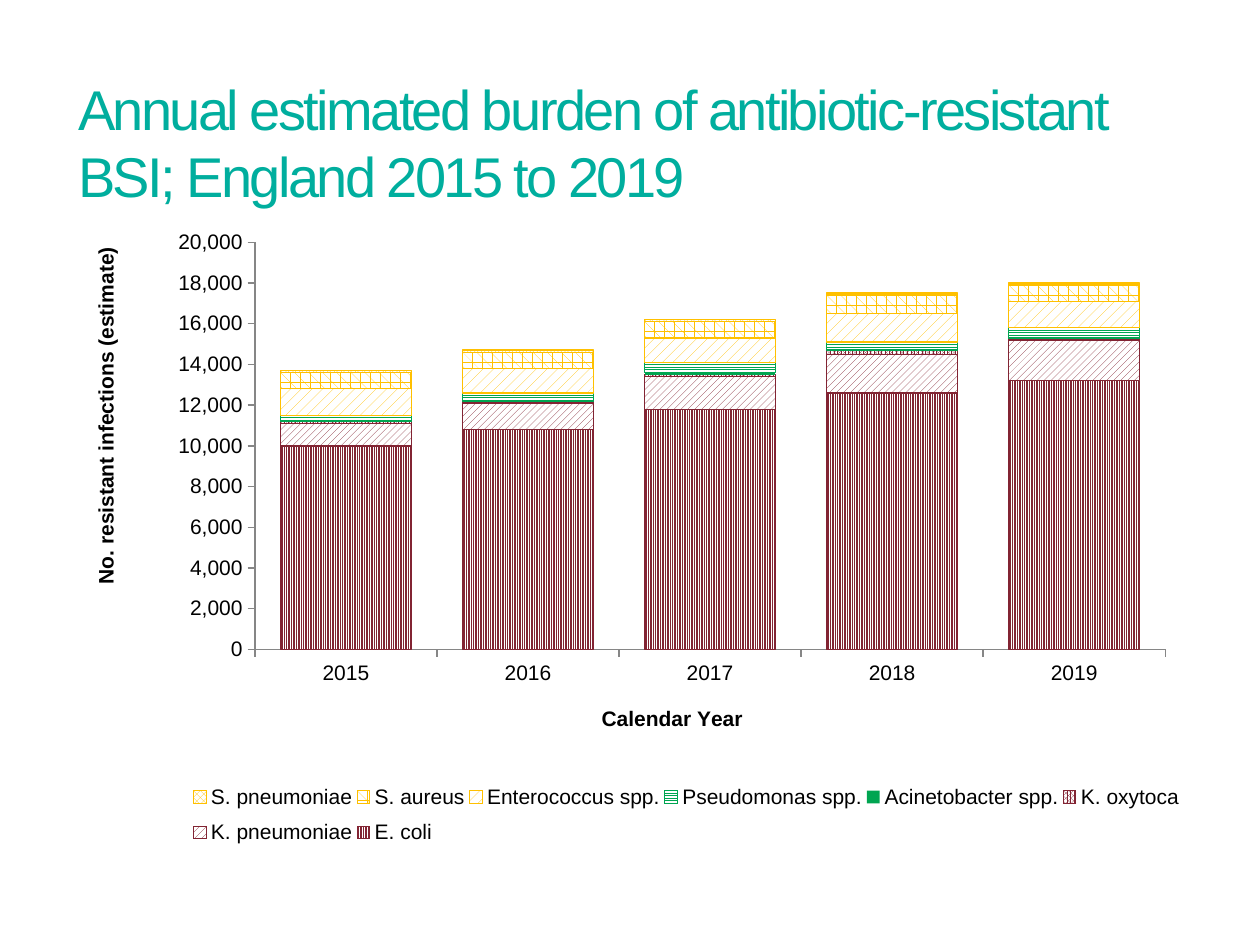
from dataclasses import dataclass
from typing import Optional

from lxml.etree import SubElement
from pptx import Presentation
from pptx.chart.axis import _BaseAxis
from pptx.chart.data import CategoryChartData
from pptx.dml.color import RGBColor
from pptx.enum.chart import XL_CHART_TYPE, XL_LEGEND_POSITION, XL_TICK_MARK
from pptx.enum.dml import MSO_PATTERN
from pptx.enum.text import MSO_ANCHOR, MSO_AUTO_SIZE, PP_ALIGN
from pptx.oxml.ns import qn
from pptx.util import Pt

FONT = "Arial"
COLORS = {
    "title": "00AE9E", "text": "000000", "axis": "868686", "white": "FFFFFF",
    "maroon": "822433", "green": "00A551", "amber": "FFC000",
}
YEARS = ["2015", "2016", "2017", "2018", "2019"]


@dataclass
class Pathogen:
    name: str
    infections: list[int]
    color: str
    pattern: Optional[MSO_PATTERN] = None
    fore: str = ""
    back: str = "white"


# Series from the bottom of the stack to the top
PATHOGENS = [
    Pathogen("E. coli", [10000, 10800, 11800, 12600, 13200], "maroon",
             MSO_PATTERN.NARROW_VERTICAL, "white", "maroon"),
    Pathogen("K. pneumoniae", [1100, 1300, 1600, 1900, 2000], "maroon",
             MSO_PATTERN.WIDE_UPWARD_DIAGONAL, "maroon"),
    Pathogen("K. oxytoca", [100, 100, 100, 200, 100], "maroon",
             MSO_PATTERN.PERCENT_80, "maroon"),
    Pathogen("Acinetobacter spp.", [0, 0, 100, 0, 0], "green"),
    Pathogen("Pseudomonas spp.", [300, 400, 500, 400, 500], "green",
             MSO_PATTERN.LIGHT_HORIZONTAL, "green"),
    Pathogen("Enterococcus spp.", [1300, 1200, 1200, 1400, 1300], "amber",
             MSO_PATTERN.DASHED_UPWARD_DIAGONAL, "amber"),
    Pathogen("S. aureus", [800, 800, 800, 900, 800], "amber",
             MSO_PATTERN.PLAID, "amber"),
    Pathogen("S. pneumoniae", [100] * 5, "amber",
             MSO_PATTERN.OUTLINED_DIAMOND, "amber"),
]


def rgb(key: str) -> RGBColor:
    return RGBColor.from_string(COLORS[key])


def place(element, index: int, inner: bool = False, **fractions: float) -> None:
    """Give a chart part a manual layout in fractions of the chart area."""
    old_layout = element.find(qn("c:layout"))
    if old_layout is not None:
        element.remove(old_layout)
    layout = SubElement(element, qn("c:layout"))
    element.insert(index, layout)
    manual = SubElement(layout, qn("c:manualLayout"))
    if inner:
        SubElement(manual, qn("c:layoutTarget")).set("val", "inner")
    for mode in ("xMode", "yMode"):
        SubElement(manual, qn(f"c:{mode}")).set("val", "edge")
    for side, fraction in fractions.items():
        SubElement(manual, qn(f"c:{side}")).set("val", str(fraction))


def style_axis(axis: _BaseAxis, title: str, x: float, y: float) -> None:
    axis.has_major_gridlines = False
    axis.major_tick_mark = XL_TICK_MARK.OUTSIDE
    axis.minor_tick_mark = XL_TICK_MARK.NONE
    axis.format.line.color.rgb = rgb("axis")
    axis.format.line.width = Pt(0.75)
    run = axis.axis_title.text_frame.paragraphs[0].add_run()
    run.text = title
    run.font.name, run.font.size, run.font.bold = FONT, Pt(12), True
    run.font.color.rgb = rgb("text")
    place(axis.axis_title._element, 1, x=x, y=y)


def style_series(series, pathogen: Pathogen) -> None:
    fill = series.format.fill
    if pathogen.pattern is None:
        fill.solid()
        fill.fore_color.rgb = rgb(pathogen.color)
        return
    fill.patterned()
    fill.pattern = pathogen.pattern
    fill.fore_color.rgb = rgb(pathogen.fore)
    fill.back_color.rgb = rgb(pathogen.back)
    series.format.line.color.rgb = rgb(pathogen.color)
    series.format.line.width = Pt(0.75)


def add_title(slide, text: str) -> None:
    title = slide.shapes.title
    title.left, title.top, title.width, title.height = Pt(44.6), Pt(43.2), Pt(632), Pt(51)
    frame = title.text_frame
    frame.margin_left = frame.margin_top = frame.margin_right = frame.margin_bottom = 0
    frame.word_wrap = True
    frame.auto_size = MSO_AUTO_SIZE.NONE
    frame.vertical_anchor = MSO_ANCHOR.TOP
    paragraph = frame.paragraphs[0]
    paragraph.alignment = PP_ALIGN.LEFT
    paragraph.line_spacing = Pt(38)
    run = paragraph.add_run()
    run.text = text
    run.font.name, run.font.size = FONT, Pt(32)
    run.font.color.rgb = rgb("title")
    run.font._element.set("spc", "-150")


def add_burden_chart(slide) -> None:
    burden = CategoryChartData(number_format="#,##0")
    burden.categories = YEARS
    for pathogen in PATHOGENS:
        burden.add_series(pathogen.name, pathogen.infections)
    chart = slide.shapes.add_chart(
        XL_CHART_TYPE.COLUMN_STACKED, Pt(44.6), Pt(129.6), Pt(632), Pt(367.2), burden
    ).chart
    chart.has_title = False
    chart.font.name, chart.font.size = FONT, Pt(12)
    chart.font.color.rgb = rgb("text")

    # Stacked columns
    columns = chart.plots[0]
    columns.gap_width, columns.overlap = 39, 100
    columns.vary_by_categories = False
    for series, pathogen in zip(columns.series, PATHOGENS):
        style_series(series, pathogen)
    place(chart._chartSpace.chart.plotArea, 0, inner=True,
          x=0.16, y=0.024, w=0.823, h=0.634)

    # Axes
    style_axis(chart.category_axis, "Calendar Year", 0.47, 0.74)
    style_axis(chart.value_axis, "No. resistant infections (estimate)", 0.01, 0.026)
    infections_axis = chart.value_axis
    infections_axis.minimum_scale, infections_axis.maximum_scale = 0, 20000
    infections_axis.major_unit = 2000
    infections_axis.tick_labels.number_format = "#,##0"
    infections_axis.tick_labels.number_format_is_linked = False

    # Legend
    chart.has_legend = True
    chart.legend.position = XL_LEGEND_POSITION.RIGHT
    chart.legend.include_in_layout = False
    place(chart.legend._element, 1, x=0.1, y=0.85, w=0.9, h=0.13)


def main() -> None:
    deck = Presentation()
    deck.slide_width, deck.slide_height = Pt(720), Pt(540)
    slide = deck.slides.add_slide(deck.slide_layouts[5])
    add_title(slide, "Annual estimated burden of antibiotic-resistant BSI; England 2015 to 2019")
    add_burden_chart(slide)
    deck.save("out.pptx")


if __name__ == "__main__":
    main()
